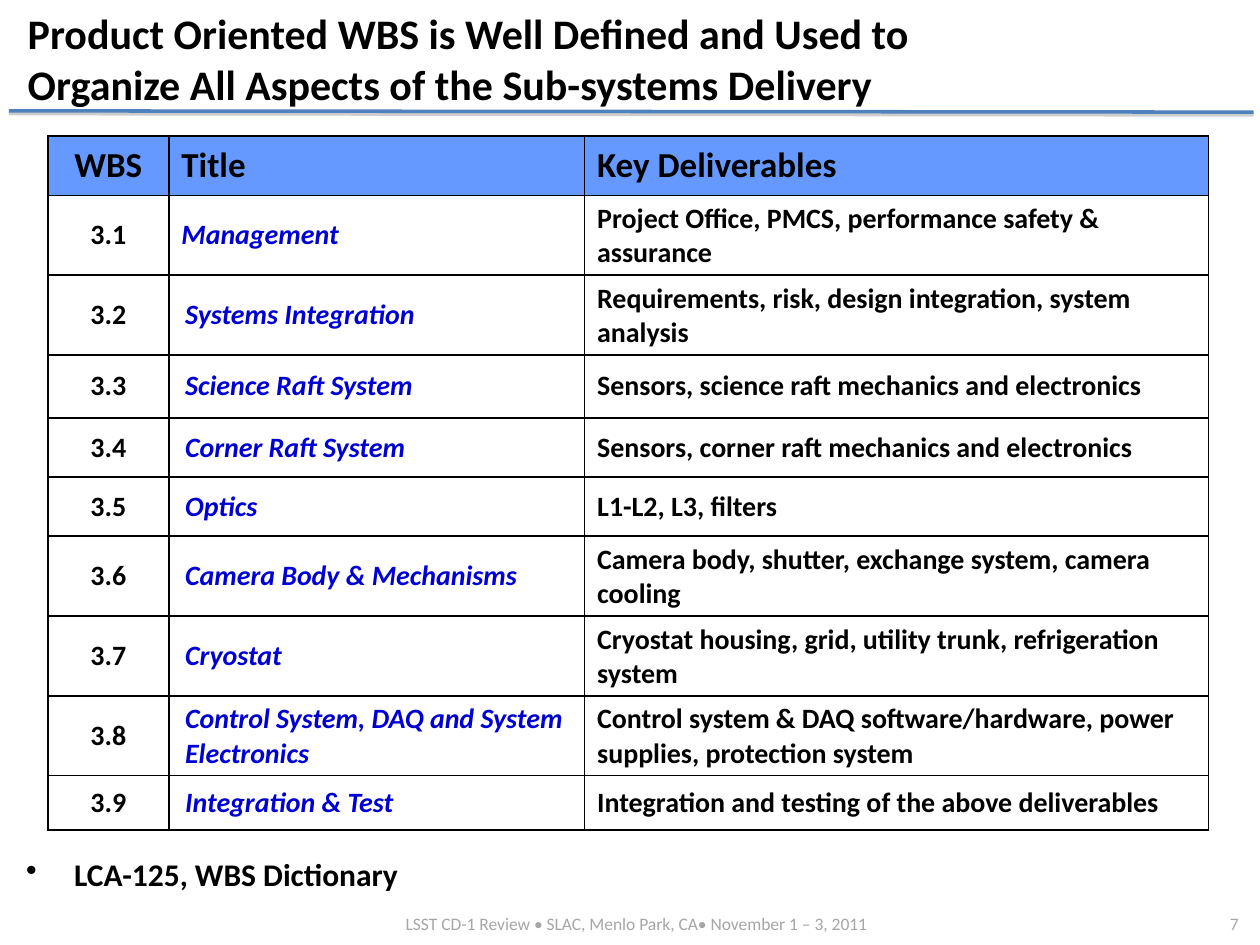
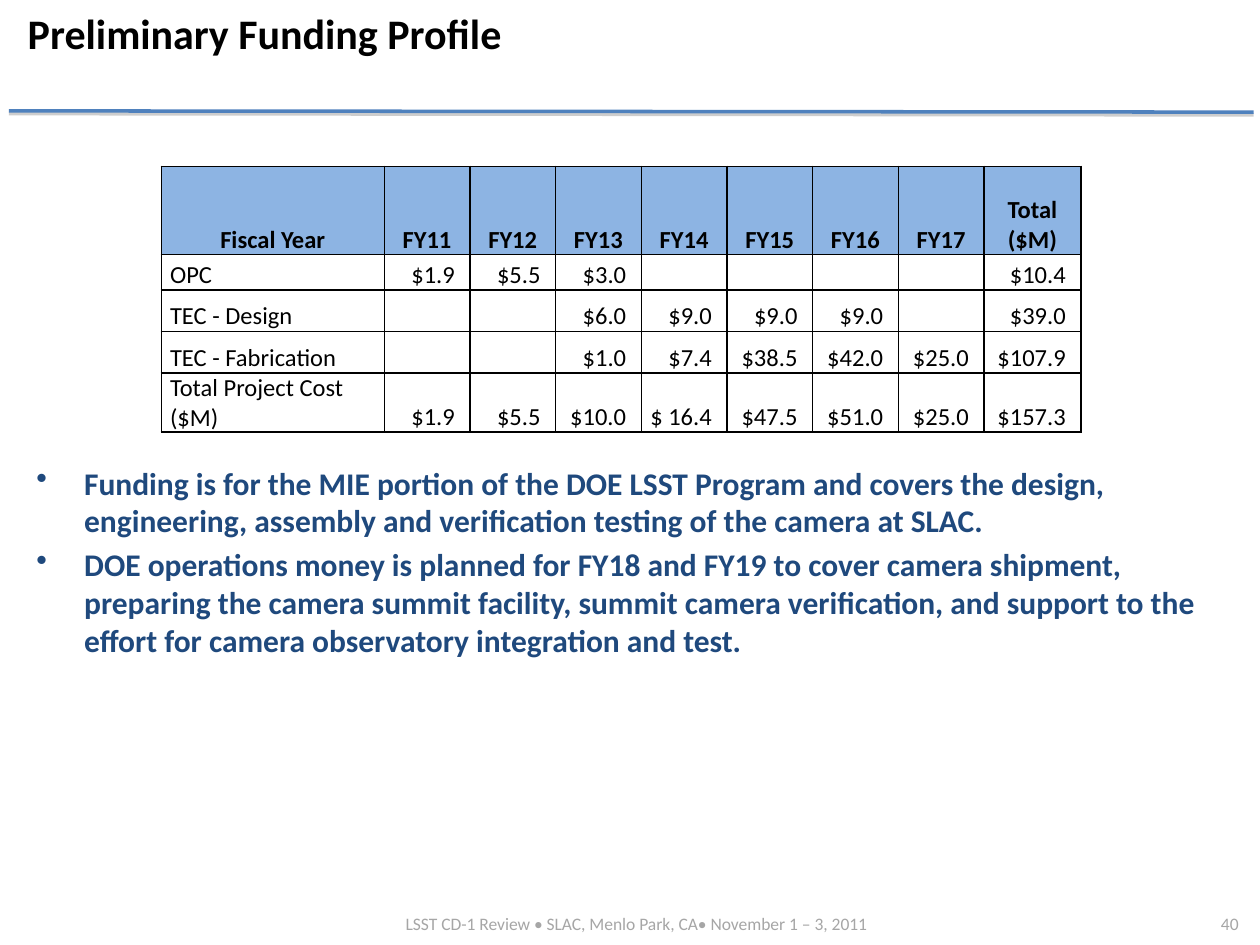
from lxml import etree
from pptx import Presentation
from pptx.dml.color import RGBColor
from pptx.enum.shapes import MSO_CONNECTOR
from pptx.enum.text import MSO_ANCHOR, MSO_AUTO_SIZE, PP_ALIGN
from pptx.oxml.ns import qn
from pptx.util import Inches, Pt

LEFT, CENTER, RIGHT = PP_ALIGN.LEFT, PP_ALIGN.CENTER, PP_ALIGN.RIGHT
TOP, MIDDLE, BOTTOM = MSO_ANCHOR.TOP, MSO_ANCHOR.MIDDLE, MSO_ANCHOR.BOTTOM
NO_AUTOFIT = MSO_AUTO_SIZE.NONE
STRAIGHT = MSO_CONNECTOR.STRAIGHT

BLACK = RGBColor(0x00, 0x00, 0x00)
GREY = RGBColor(0xA6, 0xA6, 0xA6)
SHADOW = RGBColor(0x80, 0x80, 0x80)
RULE_BLUE = RGBColor(0x4F, 0x81, 0xBD)
NAVY = RGBColor(0x1F, 0x49, 0x7D)
LINK_BLUE = RGBColor(0x00, 0x00, 0xD4)
WBS_HEADER = RGBColor(0x66, 0x99, 0xFF)
FUNDING_HEADER = RGBColor(0x8D, 0xB4, 0xE3)

# The grid has 100 columns and 75 rows
COLUMNS, ROWS = 100, 75
SLIDE_WIDTH, SLIDE_HEIGHT = Inches(10), Inches(7.5)
FONT = "Calibri"
FOOTER = "LSST CD-1 Review • SLAC, Menlo Park, CA• November 1 – 3, 2011"

WBS_ROWS = [
    ("WBS", "Title", "Key Deliverables"),
    ("3.1", "Management", "Project Office, PMCS, performance safety & assurance"),
    ("3.2", "Systems Integration",
     "Requirements, risk, design integration, system analysis"),
    ("3.3", "Science Raft System", "Sensors, science raft mechanics and electronics"),
    ("3.4", "Corner Raft System", "Sensors, corner raft mechanics and electronics"),
    ("3.5", "Optics", "L1-L2, L3, filters"),
    ("3.6", "Camera Body & Mechanisms",
     "Camera body, shutter, exchange system, camera cooling"),
    ("3.7", "Cryostat", "Cryostat housing, grid, utility trunk, refrigeration system"),
    ("3.8", "Control System, DAQ and System Electronics",
     "Control system & DAQ software/hardware, power supplies, protection system"),
    ("3.9", "Integration & Test", "Integration and testing of the above deliverables"),
]

FUNDING_ROWS = [
    ("Fiscal Year", *(f"FY{year}" for year in range(11, 18)), "Total ($M)"),
    ("OPC", "$1.9", "$5.5", "$3.0", "", "", "", "", "$10.4"),
    ("TEC - Design", "", "", "$6.0", "$9.0", "$9.0", "$9.0", "", "$39.0"),
    ("TEC - Fabrication", "", "", "$1.0", "$7.4", "$38.5", "$42.0", "$25.0", "$107.9"),
    ("Total Project Cost ($M)", "$1.9", "$5.5", "$10.0", "$ 16.4", "$47.5", "$51.0",
     "$25.0", "$157.3"),
]


def across(columns):
    return round(SLIDE_WIDTH * columns / COLUMNS)


def down(rows):
    return round(SLIDE_HEIGHT * rows / ROWS)


def area(left, top, width, height):
    return across(left), down(top), across(width), down(height)


def add_node(parent, tag, **attributes):
    node = etree.SubElement(parent, qn(tag))
    for name, value in attributes.items():
        node.set(name, str(value))
    return node


class Builder:
    """Holds the shared style and the page being filled."""

    def __init__(self):
        self.deck = Presentation()
        self.deck.slide_width, self.deck.slide_height = SLIDE_WIDTH, SLIDE_HEIGHT
        self.page = None

    def add_page(self, title, number):
        self.page = self.deck.slides.add_slide(self.deck.slide_layouts[5])
        self.add_footer(number)
        self.add_rule()
        self.set_title(title)

    def style(self, para, size, color=BLACK, bold=False, italic=False, align=LEFT):
        para.alignment = align
        font = para.font
        font.name, font.size = FONT, Pt(size)
        font.bold, font.italic = bold, italic
        font.color.rgb = color

    def set_margins(self, target, left, top, right, bottom):
        target.margin_left, target.margin_right = across(left), across(right)
        target.margin_top, target.margin_bottom = down(top), down(bottom)

    def set_title(self, text):
        title = self.page.shapes.title
        title.left, title.top, title.width, title.height = area(1.7, 0.4, 76.9, 9.2)
        frame = title.text_frame
        frame.text = text
        frame.word_wrap = True
        frame.auto_size = NO_AUTOFIT
        frame.vertical_anchor = TOP
        self.set_margins(frame, 0.5, 0.2, 0.5, 0.5)
        self.style(frame.paragraphs[0], 24, bold=True)

    def add_rule(self):
        rule = self.page.shapes.add_connector(
            STRAIGHT, across(99.5), down(8.9), across(0.7), down(8.8))
        rule.line.color.rgb, rule.line.width = RULE_BLUE, Pt(2)
        effects = add_node(rule._element.spPr, "a:effectLst")
        shadow = add_node(effects, "a:outerShdw", blurRad=0, dist=Pt(1.6),
                          dir=90 * 60000, rotWithShape=0)
        color = add_node(shadow, "a:srgbClr", val=SHADOW)
        add_node(color, "a:alpha", val=38000)

    def add_box(self, *place):
        frame = self.page.shapes.add_textbox(*area(*place)).text_frame
        frame.word_wrap = True
        return frame

    def add_footer(self, number):
        frame = self.add_box(1.4, 72.5, 97.2, 1.7)
        self.set_margins(frame, 0, 0, 0, 0)
        para = frame.paragraphs[0]
        para.text = f"\t{FOOTER}\t{number}"
        tabs = add_node(para._p.get_or_add_pPr(), "a:tabLst")
        for stop, kind in ((49.1, "ctr"), (96.9, "r")):
            add_node(tabs, "a:tab", pos=across(stop), algn=kind)
        self.style(para, 10, GREY)

    def add_bullets(self, place, items, color):
        frame = self.add_box(*place)
        for index, item in enumerate(items):
            para = frame.add_paragraph() if index else frame.paragraphs[0]
            para.text = item
            properties = para._p.get_or_add_pPr()
            properties.set("marL", str(across(3.8)))
            properties.set("indent", str(-across(3.8)))
            add_node(properties, "a:buChar", char="•")
            self.style(para, 18, color, bold=True)
            if index:
                para.space_before = Pt(3.6)

    def add_table(self, left, top, widths, heights):
        table = self.page.shapes.add_table(
            len(heights), len(widths),
            *area(left, top, sum(widths), sum(heights))).table
        table.first_row = table.horz_banding = False
        for column, width in zip(table.columns, widths):
            column.width = across(width)
        for row, height in zip(table.rows, heights):
            row.height = down(height)
        return table

    def fill_cell(self, cell, text, margins, anchor, fill=None, **style):
        self.set_margins(cell, *margins)
        cell.vertical_anchor = anchor
        for side in ("a:lnL", "a:lnR", "a:lnT", "a:lnB"):
            border = add_node(cell._tc.get_or_add_tcPr(), side, w=Pt(1))
            add_node(add_node(border, "a:solidFill"), "a:srgbClr", val=BLACK)
        if fill is None:
            cell.fill.background()
        else:
            cell.fill.solid()
            cell.fill.fore_color.rgb = fill
        para = cell.text_frame.paragraphs[0]
        if text:
            para.text = text
        self.style(para, **style)
        if not text:
            add_node(para._p, "a:endParaRPr", sz=style["size"] * 100)


def build_wbs(builder):
    builder.add_page("Product Oriented WBS is Well Defined and Used to "
                     "Organize All Aspects of the Sub-systems Delivery", 7)
    builder.add_bullets((1.1, 67.4, 96.7, 4.1), ["LCA-125, WBS Dictionary"], BLACK)
    heights = [4.7, 5.1, 4.7, 5, 4.7, 4.7] + [4.3] * 4
    table = builder.add_table(3.8, 10.8, [9.6, 33, 49.5], heights)
    for row, values in enumerate(WBS_ROWS):
        for column, text in enumerate(values):
            subsystem = column == 1 and row > 0
            inset = 1.3 if column == 1 and row > 1 else 1
            builder.fill_cell(
                table.cell(row, column), text, (inset, 0.5, 1, 0.5), MIDDLE,
                fill=None if row else WBS_HEADER, size=16 if row else 20,
                color=LINK_BLUE if subsystem else BLACK, bold=True,
                italic=subsystem, align=LEFT if column else CENTER)


def build_funding(builder):
    builder.add_page("Preliminary Funding Profile", 40)
    table = builder.add_table(12.8, 13.2, [17.7] + [6.8] * 7 + [7.7],
                              [7, 2.8, 3.3, 3.3, 2.8])
    for row, values in enumerate(FUNDING_ROWS):
        for column, text in enumerate(values):
            amount = row > 0 and column > 0
            body_align = RIGHT if amount else LEFT
            builder.fill_cell(
                table.cell(row, column), text,
                (0.5, 0, 1.2, 0) if amount else (0.7, 0, 0.7, 0), BOTTOM,
                fill=None if row else FUNDING_HEADER, size=14, bold=row == 0,
                align=body_align if row else CENTER)
    builder.add_bullets((1.9, 36.3, 96.7, 32.5), [
        "Funding is for the MIE portion of the DOE LSST Program and covers the design, "
        "engineering, assembly and verification testing of the camera at SLAC.",
        "DOE operations money is planned for FY18 and FY19 to cover camera shipment, "
        "preparing the camera summit facility, summit camera verification, and support "
        "to the effort for camera observatory integration and test.",
    ], NAVY)


def main():
    builder = Builder()
    build_wbs(builder)
    build_funding(builder)
    builder.deck.save("out.pptx")


if __name__ == "__main__":
    main()
